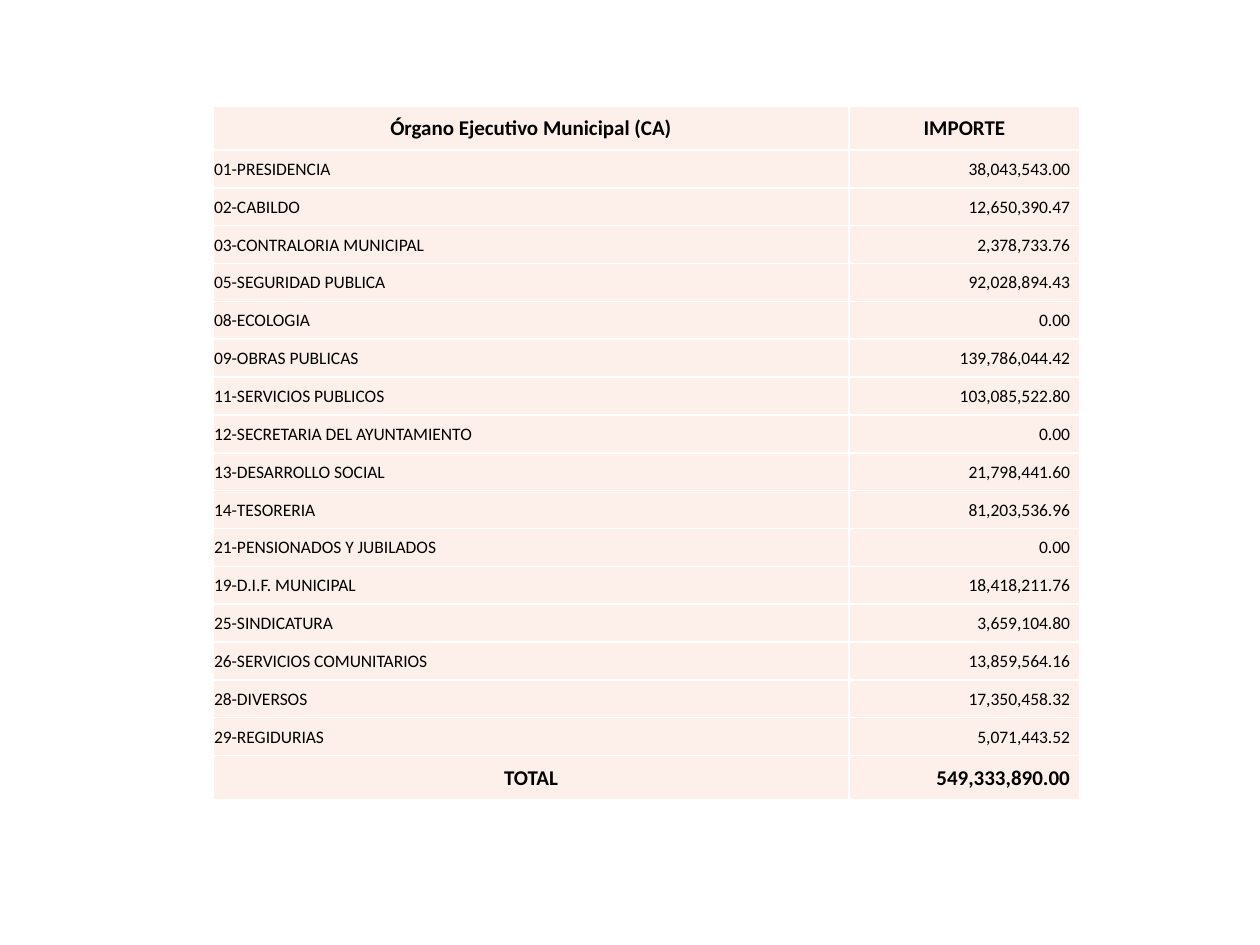
from lxml.etree import SubElement
from pptx import Presentation
from pptx.dml.color import RGBColor
from pptx.enum.text import MSO_ANCHOR, PP_ALIGN as ALIGN
from pptx.oxml.ns import qn
from pptx.util import Pt

PX = 914400 // 126
BLACK = RGBColor(0x00, 0x00, 0x00)
WHITE = RGBColor(0xFF, 0xFF, 0xFF)
PEACH = RGBColor(0xFD, 0xEF, 0xE9)

HEADER = ("Órgano Ejecutivo Municipal (CA)", "IMPORTE")
DEPARTMENTS = [
    ("01-PRESIDENCIA", "38,043,543.00"),
    ("02-CABILDO", "12,650,390.47"),
    ("03-CONTRALORIA MUNICIPAL", "2,378,733.76"),
    ("05-SEGURIDAD PUBLICA", "92,028,894.43"),
    ("08-ECOLOGIA", "0.00"),
    ("09-OBRAS PUBLICAS", "139,786,044.42"),
    ("11-SERVICIOS PUBLICOS", "103,085,522.80"),
    ("12-SECRETARIA DEL AYUNTAMIENTO", "0.00"),
    ("13-DESARROLLO SOCIAL", "21,798,441.60"),
    ("14-TESORERIA", "81,203,536.96"),
    ("21-PENSIONADOS Y JUBILADOS", "0.00"),
    ("19-D.I.F. MUNICIPAL", "18,418,211.76"),
    ("25-SINDICATURA", "3,659,104.80"),
    ("26-SERVICIOS COMUNITARIOS", "13,859,564.16"),
    ("28-DIVERSOS", "17,350,458.32"),
    ("29-REGIDURIAS", "5,071,443.52"),
]
TOTAL = ("TOTAL", "549,333,890.00")

LEFT, TOP = 213, 106
COLUMN_WIDTHS = (636, 231)
END_HEIGHT = 44
BODY_HEIGHT = 606


def write_cell(cell, text, size=10, bold=False, align=ALIGN.LEFT, right=1):
    """Fill, border and write one cell; right is its right margin in px."""
    cell.vertical_anchor = MSO_ANCHOR.MIDDLE
    cell.margin_left = cell.margin_top = PX
    cell.margin_right = right * PX
    cell.margin_bottom = 0
    properties = cell._tc.get_or_add_tcPr()
    for side in ("a:lnL", "a:lnR", "a:lnT", "a:lnB"):
        line = SubElement(properties, qn(side), w=str(Pt(1)))
        SubElement(SubElement(line, qn("a:solidFill")), qn("a:srgbClr"), val=str(WHITE))
    cell.fill.solid()
    cell.fill.fore_color.rgb = PEACH
    para = cell.text_frame.paragraphs[0]
    para.alignment = align
    span = para.add_run()
    span.text = text
    span.font.name = "Calibri"
    span.font.size = Pt(size)
    span.font.bold = bold
    span.font.color.rgb = BLACK


deck = Presentation()
deck.slide_width, deck.slide_height = 1260 * PX, 945 * PX
page = deck.slides.add_slide(deck.slide_layouts[6])

rows = [HEADER, *DEPARTMENTS, TOTAL]
last = len(rows) - 1
frame = page.shapes.add_table(
    len(rows), len(HEADER), LEFT * PX, TOP * PX,
    sum(COLUMN_WIDTHS) * PX, (BODY_HEIGHT + 2 * END_HEIGHT) * PX)
table = frame.table
for column, width in zip(table.columns, COLUMN_WIDTHS):
    column.width = width * PX

body_height = BODY_HEIGHT * PX // len(DEPARTMENTS)
for index, (name, amount) in enumerate(rows):
    at_end = index in (0, last)
    table.rows[index].height = END_HEIGHT * PX if at_end else body_height
    style = {"size": 12, "bold": True} if at_end else {}
    write_cell(table.cell(index, 0), name,
               align=ALIGN.CENTER if at_end else ALIGN.LEFT, **style)
    if index == 0:
        write_cell(table.cell(index, 1), amount, align=ALIGN.CENTER, **style)
    else:
        write_cell(table.cell(index, 1), amount, align=ALIGN.RIGHT, right=10, **style)

deck.save("out.pptx")
